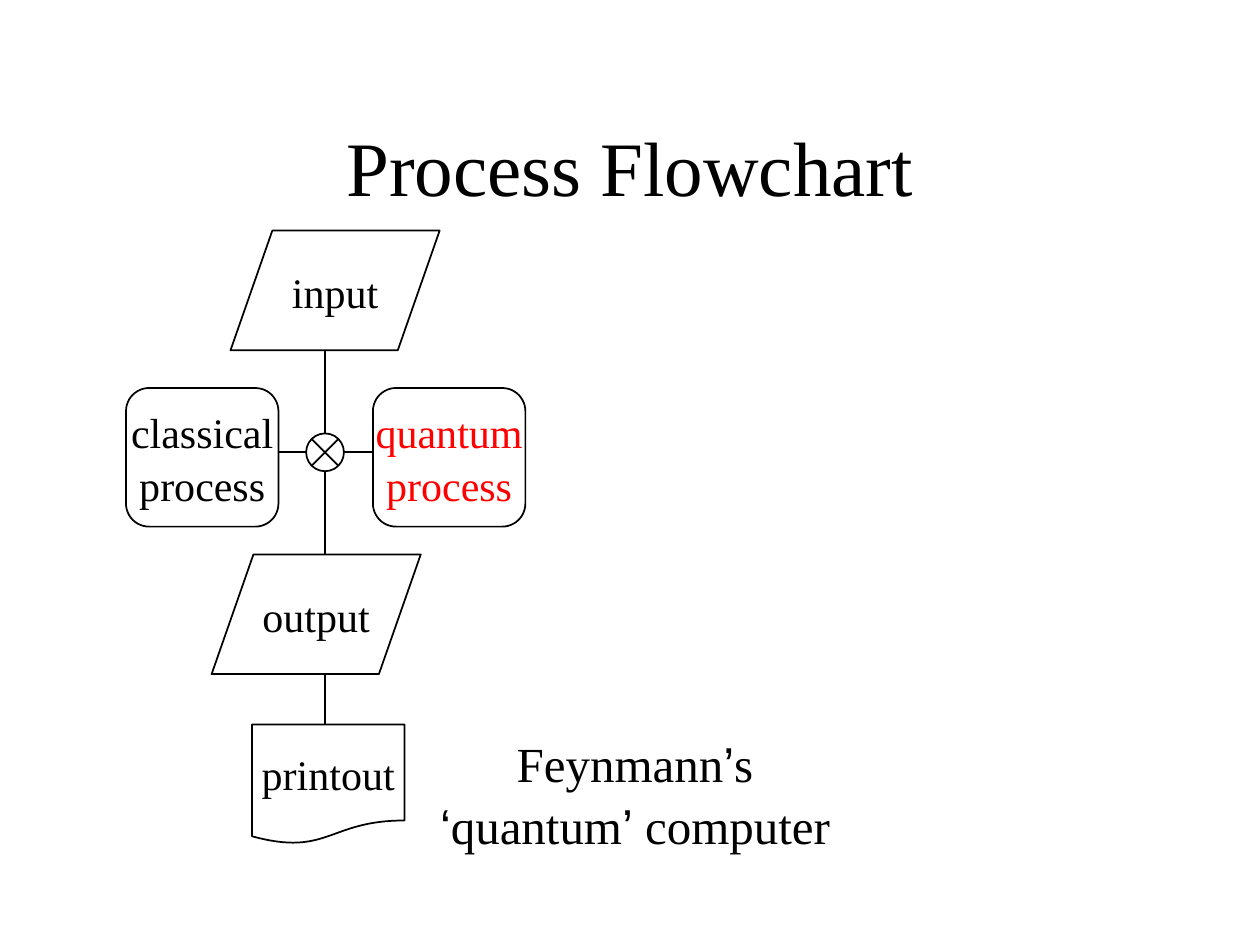
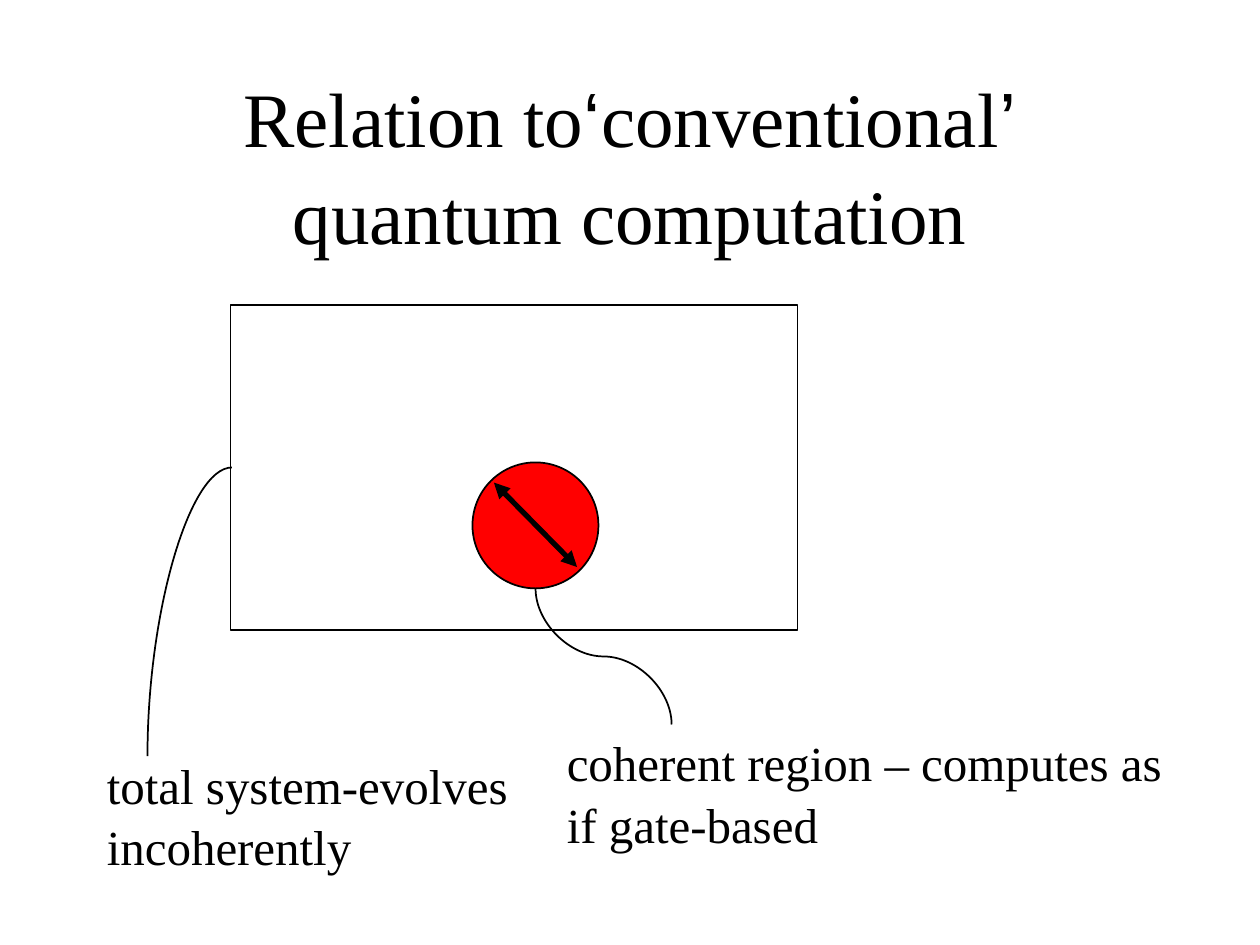
from itertools import groupby

from lxml import etree
from pptx import Presentation
from pptx.dml.color import RGBColor
from pptx.enum.shapes import MSO_CONNECTOR, MSO_SHAPE
from pptx.enum.text import MSO_ANCHOR, MSO_AUTO_SIZE, PP_ALIGN
from pptx.oxml.ns import qn
from pptx.util import Inches, Pt

DATA, JUNCTION = MSO_SHAPE.FLOWCHART_DATA, MSO_SHAPE.FLOWCHART_SUMMING_JUNCTION
PROCESS, DOCUMENT = MSO_SHAPE.FLOWCHART_ALTERNATE_PROCESS, MSO_SHAPE.FLOWCHART_DOCUMENT
RECTANGLE, OVAL = MSO_SHAPE.RECTANGLE, MSO_SHAPE.OVAL
STRAIGHT, CURVE = MSO_CONNECTOR.STRAIGHT, MSO_CONNECTOR.CURVE
LEFT, CENTER = PP_ALIGN.LEFT, PP_ALIGN.CENTER
TOP, MIDDLE = MSO_ANCHOR.TOP, MSO_ANCHOR.MIDDLE

COLORS = {"ink": "000000", "paper": "FFFFFF", "quantum": "FF0000"}
TEXT_FONT, QUOTE_FONT = "Times New Roman", "Arial"
QUOTES = "‘’"
LINE_SPACING = 1.05
SLIDE_WIDTH, SLIDE_HEIGHT = 10, 7.5
TITLE_BOX = (0.75, 0.67, 8.5, 1.25)

FORMATS = {
    "title": {"size": 44, "align": CENTER, "anchor": MIDDLE, "wrap": True},
    "node": {"size": 24, "align": CENTER, "anchor": MIDDLE, "wrap": False},
    "caption": {"size": 28, "align": CENTER, "anchor": TOP, "wrap": False},
    "note": {"size": 28, "align": LEFT, "anchor": TOP, "wrap": False},
}

# Flowchart: name -> preset, box, lines of text, text colour
AXIS, CROSSING = 2.58, 3.59
NODES = {
    "input": (DATA, (1.83, 1.83, 1.66, 0.95), ["input"], "ink"),
    "junction": (JUNCTION, (2.43, 3.44, 0.3, 0.3), [], "ink"),
    "printout": (DOCUMENT, (2, 5.75, 1.21, 0.95), ["printout"], "ink"),
    "quantum": (PROCESS, (2.96, 3.08, 1.21, 1.1), ["quantum", "process"], "quantum"),
    "classical": (PROCESS, (1, 3.08, 1.21, 1.1), ["classical", "process"], "ink"),
    "output": (DATA, (1.68, 4.4, 1.66, 0.95), ["output"], "ink"),
}
DOWN_LINKS = [("input", "junction"), ("junction", "output"), ("output", "printout")]
ACROSS_LINKS = [("classical", "junction"), ("junction", "quantum")]
CAPTION = ((3.26, 5.75, 3.56, 1.05), ["Feynmann’s", "‘quantum’ computer"])

# Relation diagram
SYSTEM_BOX = (1.83, 2.42, 4.5, 2.58)
REGION_BOX = (3.75, 3.67, 1, 1)
REGION_DIAMETER = ((3.92, 3.83), (4.58, 4.5))
# preset, box before rotation, transform (rotation in 60000ths of a degree)
LEADERS = [
    ("curvedConnector3", (4.25, 4.67, 1.08, 1.08), {"rot": "16200000", "flipH": "1"}),
    ("curvedConnector2", (1.17, 3.71, 0.67, 2.29), {"rot": "10800000", "flipV": "1"}),
]
NOTES = [
    ((4.4, 5.74, 5, 1.05), ["coherent region – computes as", "if gate-based"]),
    ((0.75, 5.92, 3.43, 1.05), ["total system-evolves", "incoherently"]),
]


def color(name):
    return RGBColor.from_string(COLORS[name])


def write(shape, lines, format_name, color_name="ink"):
    """Fill a shape with one paragraph a line; quotation marks get their own font."""
    style = FORMATS[format_name]
    frame = shape.text_frame
    frame.word_wrap = style["wrap"]
    frame.vertical_anchor = style["anchor"]
    for index, line in enumerate(lines):
        paragraph = frame.paragraphs[0] if index == 0 else frame.add_paragraph()
        paragraph.alignment = style["align"]
        paragraph.line_spacing = LINE_SPACING
        for is_quote, letters in groupby(line, lambda letter: letter in QUOTES):
            run = paragraph.add_run()
            run.text = "".join(letters)
            run.font.name = QUOTE_FONT if is_quote else TEXT_FONT
            run.font.size = Pt(style["size"])
            run.font.color.rgb = color(color_name)


def add_text(slide, box, lines, format_name):
    shape = slide.shapes.add_textbox(*map(Inches, box))
    write(shape, lines, format_name)
    if not FORMATS[format_name]["wrap"]:
        shape.text_frame.auto_size = MSO_AUTO_SIZE.SHAPE_TO_FIT_TEXT


def add_outlined(shapes, preset, box, fill="paper"):
    shape = shapes.add_shape(preset, *map(Inches, box))
    shape.shadow.inherit = False
    shape.fill.solid()
    shape.fill.fore_color.rgb = color(fill)
    shape.line.color.rgb = color("ink")
    shape.line.width = Pt(1)
    return shape


def add_line(shapes, start, end, kind=STRAIGHT, width=1):
    connector = shapes.add_connector(kind, *map(Inches, (*start, *end)))
    connector.line.color.rgb = color("ink")
    connector.line.width = Pt(width)
    etree.SubElement(connector._element.spPr, qn("a:effectLst"))
    return connector


def add_double_arrow(shapes, start, end):
    connector = add_line(shapes, start, end, width=3)
    line = connector._element.spPr.find(qn("a:ln"))
    for tag in ("a:headEnd", "a:tailEnd"):
        etree.SubElement(line, qn(tag), type="triangle")


def add_leader(shapes, preset, box, transform):
    left, top, width, height = box
    connector = add_line(shapes, (left, top), (left + width, top + height), CURVE)
    properties = connector._element.spPr
    properties.find(qn("a:prstGeom")).set("prst", preset)
    for name, value in transform.items():
        properties.find(qn("a:xfrm")).set(name, value)


def add_slide(presentation, title):
    slide = presentation.slides.add_slide(presentation.slide_layouts[6])
    add_text(slide, TITLE_BOX, [title], "title")
    return slide


def build_flowchart(presentation):
    slide = add_slide(presentation, "Process Flowchart")
    shapes = slide.shapes.add_group_shape().shapes
    for preset, box, lines, text_color in NODES.values():
        write(add_outlined(shapes, preset, box), lines, "node", text_color)
    boxes = {name: node[1] for name, node in NODES.items()}
    for upper, lower in DOWN_LINKS:
        _, top, _, height = boxes[upper]
        add_line(shapes, (AXIS, top + height), (AXIS, boxes[lower][1]))
    for before, after in ACROSS_LINKS:
        left, _, width, _ = boxes[before]
        add_line(shapes, (left + width, CROSSING), (boxes[after][0], CROSSING))
    add_text(slide, *CAPTION, "caption")


def build_relation(presentation):
    slide = add_slide(presentation, "Relation to‘conventional’ quantum computation")
    add_outlined(slide.shapes, RECTANGLE, SYSTEM_BOX)
    add_outlined(slide.shapes, OVAL, REGION_BOX, "quantum")
    add_double_arrow(slide.shapes, *REGION_DIAMETER)
    for leader in LEADERS:
        add_leader(slide.shapes, *leader)
    for box, lines in NOTES:
        add_text(slide, box, lines, "note")


def main():
    presentation = Presentation()
    presentation.slide_width = Inches(SLIDE_WIDTH)
    presentation.slide_height = Inches(SLIDE_HEIGHT)
    build_flowchart(presentation)
    build_relation(presentation)
    presentation.save("out.pptx")


if __name__ == "__main__":
    main()
